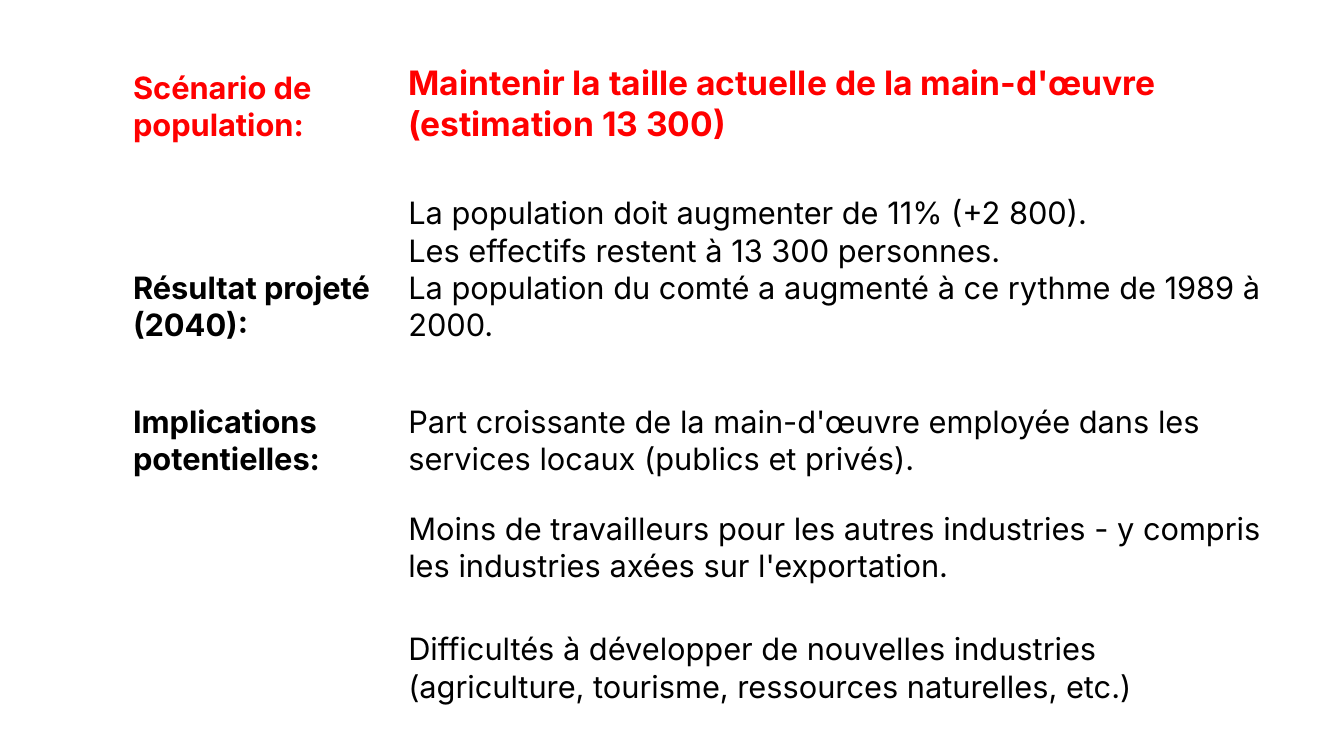
from pptx import Presentation
from pptx.dml.color import RGBColor
from pptx.enum.text import MSO_ANCHOR
from pptx.util import Inches, Pt

RED = RGBColor(255, 0, 0)
BLACK = RGBColor(0, 0, 0)
WHITE = RGBColor(255, 255, 255)
FONT = "Inter"

COLS = [2.73, 8.61]
ROWS = [
    (1.1, "Scénario de population:",
     ["Maintenir la taille actuelle de la main-d'œuvre (estimation 13 300)"]),
    (1.98, "Résultat projeté (2040):",
     ["La population doit augmenter de 11% (+2 800).",
      "Les effectifs restent à 13 300 personnes.",
      "La population du comté a augmenté à ce rythme de 1989 à 2000."]),
    (1.33, "Implications potentielles:",
     ["Part croissante de la main-d'œuvre employée dans les services locaux "
      "(publics et privés)."]),
    (1.06, "",
     ["Moins de travailleurs pour les autres industries - y compris "
      "les industries axées sur l'exportation."]),
    (1.2, "",
     ["Difficultés à développer de nouvelles industries "
      "(agriculture, tourisme, ressources naturelles, etc.)"]),
]


def fill_cell(cell, lines, size, color, bold):
    cell.fill.solid()
    cell.fill.fore_color.rgb = WHITE
    cell.vertical_anchor = MSO_ANCHOR.BOTTOM
    cell.margin_left = cell.margin_top = cell.margin_right = Inches(0.01)
    cell.margin_bottom = 0
    frame = cell.text_frame
    for i, line in enumerate(lines):
        para = frame.add_paragraph() if i else frame.paragraphs[0]
        if line:
            run = para.add_run()
            run.text = line
            font = run.font
            font.name = FONT
            font.size = Pt(size)
            font.bold = bold
            font.color.rgb = color


def main():
    deck = Presentation()
    deck.slide_width, deck.slide_height = Inches(13.33), Inches(7.5)
    slide = deck.slides.add_slide(deck.slide_layouts[6])
    high = sum(row[0] for row in ROWS)
    table = slide.shapes.add_table(
        len(ROWS), len(COLS), Inches(1.31), Inches(0.33),
        Inches(sum(COLS)), Inches(high)).table
    table.horz_banding = False
    for col, wide in zip(table.columns, COLS):
        col.width = Inches(wide)
    for i, (tall, label, lines) in enumerate(ROWS):
        head = i == 0
        color = RED if head else BLACK
        table.rows[i].height = Inches(tall)
        fill_cell(table.cell(i, 0), [label], 22, color, True)
        fill_cell(table.cell(i, 1), lines, 24 if head else 22, color, head)
    deck.save("out.pptx")


if __name__ == "__main__":
    main()
